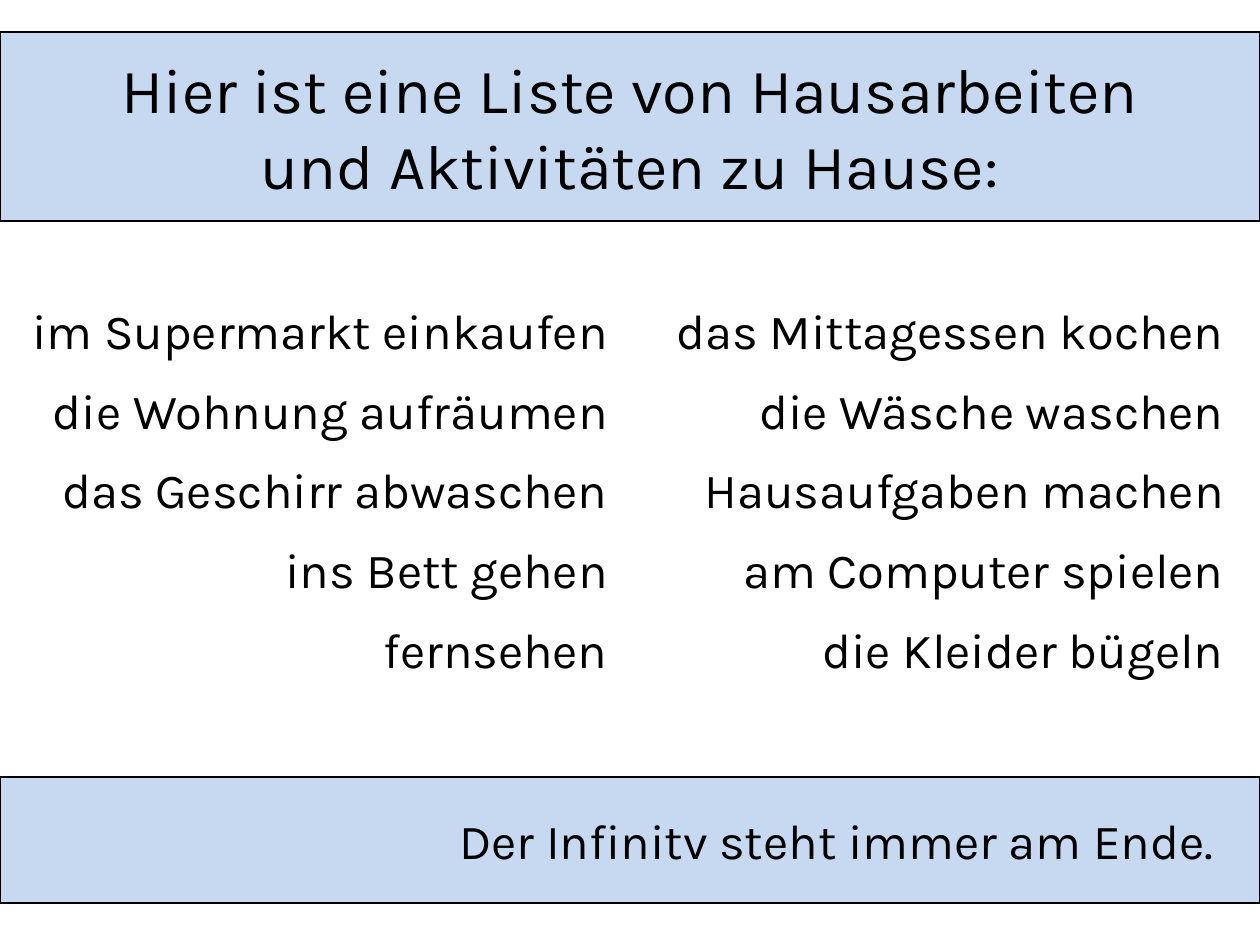
from pptx import Presentation
from pptx.dml.color import RGBColor
from pptx.enum.shapes import MSO_SHAPE
from pptx.enum.text import MSO_ANCHOR, MSO_AUTO_SIZE, PP_ALIGN
from pptx.util import Emu, Pt

PX = 914400 // 126
WIDTH, HEIGHT = 1260, 945
FONT, INK, BAND = "Karla", "000000", "C6D9F1"
INSET = 13

BANDS = [
    (32, 189, 36, PP_ALIGN.CENTER, INSET,
     ["Hier ist eine Liste von Hausarbeiten", "und Aktivitäten zu Hause:"]),
    (777, 126, 28, PP_ALIGN.RIGHT, 47, ["Der Infinitv steht immer am Ende."]),
]

LIST_TOP, LIST_HEIGHT = 294, 394
LISTS = [
    (-54, 674, ["im Supermarkt einkaufen", "die Wohnung aufräumen",
                "das Geschirr abwaschen", "ins Bett gehen", "fernsehen"]),
    (581, 655, ["das Mittagessen kochen", "die Wäsche waschen",
                "Hausaufgaben machen", "am Computer spielen", "die Kleider bügeln"]),
]


def px(*lengths):
    return [Emu(length * PX) for length in lengths]


def color(value):
    return RGBColor.from_string(value)


def write(text_frame, lines, size, alignment, gap=0):
    text_frame.word_wrap = True
    text_frame.text = "\n".join(lines)
    for index, paragraph in enumerate(text_frame.paragraphs):
        paragraph.alignment = alignment
        paragraph.space_before = Pt(gap if index else 0)
        paragraph.space_after = Pt(gap)
        for run in paragraph.runs:
            run.font.name = FONT
            run.font.size = Pt(size)
            run.font.color.rgb = color(INK)


def add_band(slide, top, height, size, alignment, right_inset, lines):
    shape = slide.shapes.add_shape(MSO_SHAPE.RECTANGLE, *px(0, top, WIDTH, height))
    shape.shadow.inherit = False
    shape.fill.solid()
    shape.fill.fore_color.rgb = color(BAND)
    shape.line.color.rgb = color(INK)
    shape.line.width = Pt(0.75)
    text_frame = shape.text_frame
    text_frame.vertical_anchor = MSO_ANCHOR.MIDDLE
    text_frame.margin_left, text_frame.margin_right = px(INSET, right_inset)
    write(text_frame, lines, size, alignment)


def add_list(slide, left, width, lines):
    shape = slide.shapes.add_textbox(*px(left, LIST_TOP, width, LIST_HEIGHT))
    write(shape.text_frame, lines, 28, PP_ALIGN.RIGHT, gap=6)
    shape.text_frame.auto_size = MSO_AUTO_SIZE.SHAPE_TO_FIT_TEXT


def main():
    presentation = Presentation()
    presentation.slide_width, presentation.slide_height = px(WIDTH, HEIGHT)
    slide = presentation.slides.add_slide(presentation.slide_layouts[6])
    for band in BANDS:
        add_band(slide, *band)
    for activities in LISTS:
        add_list(slide, *activities)
    presentation.save("out.pptx")


if __name__ == "__main__":
    main()
